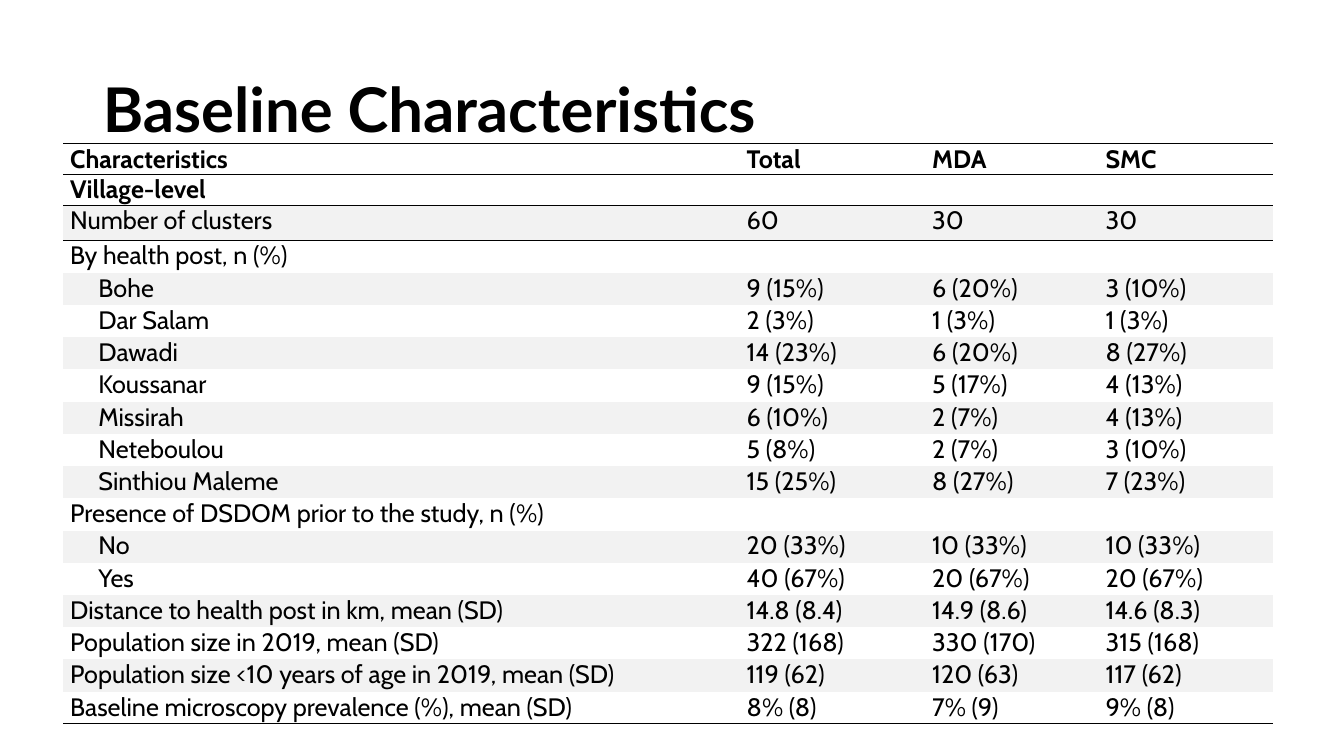
from dataclasses import dataclass
from lxml.etree import SubElement
from pptx import Presentation
from pptx.dml.color import RGBColor
from pptx.enum.text import MSO_ANCHOR, MSO_AUTO_SIZE, PP_ALIGN
from pptx.oxml import parse_xml
from pptx.oxml.ns import nsdecls, qn
from pptx.util import Inches, Pt


@dataclass(frozen=True)
class Theme:
    ink: str = "000000"
    band: str = "F2F2F2"
    title_font: str = "Lato"
    body_font: str = "Cabin"
    title_size: int = 44
    body_size: int = 18
    rule: int = 1


theme = Theme()
NO_GRID = "{2D5ABB26-0587-4C30-8999-92F81FD0307C}"


def style(p, font, size, bold):
    for r in p.runs:
        r.font.name = font
        r.font.size = Pt(size)
        r.font.bold = bold
        r.font.color.rgb = RGBColor.from_string(theme.ink)


def add_rule(cell, side):
    tcPr = cell._tc.get_or_add_tcPr()
    ln = parse_xml(f'<a:{side} {nsdecls("a")} w="{Pt(theme.rule)}"/>')
    fill = SubElement(ln, qn("a:solidFill"))
    SubElement(fill, qn("a:srgbClr"), val=theme.ink)
    tcPr.insert(0, ln)


prs = Presentation()
prs.slide_width = W = Inches(13.33)
prs.slide_height = H = Inches(7.5)
s = prs.slides.add_slide(prs.slide_layouts[5])

title = s.shapes.title
title.left, title.top = int(W * 0.069), int(H * 0.053)
title.width, title.height = int(W * 0.863), int(H * 0.193)
tf = title.text_frame
tf.text = "Baseline Characteristics"
tf.auto_size = MSO_AUTO_SIZE.NONE
tf.vertical_anchor = MSO_ANCHOR.MIDDLE
p = tf.paragraphs[0]
p.alignment = PP_ALIGN.LEFT
p.line_spacing = 0.9
style(p, theme.title_font, theme.title_size, True)

rows = [
    (0, "Characteristics", "Total", "MDA", "SMC"),
    (0, "Village-level", "", "", ""),
    (0, "Number of clusters", "60", "30", "30"),
    (0, "By health post, n (%)", "", "", ""),
    (1, "Bohe", "9 (15%)", "6 (20%)", "3 (10%)"),
    (1, "Dar Salam", "2 (3%)", "1 (3%)", "1 (3%)"),
    (1, "Dawadi", "14 (23%)", "6 (20%)", "8 (27%)"),
    (1, "Koussanar", "9 (15%)", "5 (17%)", "4 (13%)"),
    (1, "Missirah", "6 (10%)", "2 (7%)", "4 (13%)"),
    (1, "Neteboulou", "5 (8%)", "2 (7%)", "3 (10%)"),
    (1, "Sinthiou Maleme", "15 (25%)", "8 (27%)", "7 (23%)"),
    (0, "Presence of DSDOM prior to the study, n (%)", "", "", ""),
    (1, "No", "20 (33%)", "10 (33%)", "10 (33%)"),
    (1, "Yes", "40 (67%)", "20 (67%)", "20 (67%)"),
    (0, "Distance to health post in km, mean (SD)", "14.8 (8.4)", "14.9 (8.6)", "14.6 (8.3)"),
    (0, "Population size in 2019, mean (SD)", "322 (168)", "330 (170)", "315 (168)"),
    (0, "Population size <10 years of age in 2019, mean (SD)", "119 (62)", "120 (63)", "117 (62)"),
    (0, "Baseline microscopy prevalence (%), mean (SD)", "8% (8)", "7% (9)", "9% (8)"),
]
col_inches = [6.71, 1.84, 1.72, 1.73]
row_inches = [0.28, 0.26, 0.35] + [0.32] * (len(rows) - 3)
heading_rows = 2
last = len(rows) - 1
pad, indent = Inches(0.07), Inches(0.28)

frame = s.shapes.add_table(
    len(rows), len(col_inches), int(W * 0.047), int(H * 0.19),
    Inches(sum(col_inches)), Inches(sum(row_inches)))
table = frame.table
table.first_row = False
table.horz_banding = False
table._tbl.tblPr.find(qn("a:tableStyleId")).text = NO_GRID
for col, width in zip(table.columns, col_inches):
    col.width = Inches(width)

for i, (level, *texts) in enumerate(rows):
    table.rows[i].height = Inches(row_inches[i])
    for j, text in enumerate(texts):
        cell = table.cell(i, j)
        cell.margin_left = pad + (indent * level if j == 0 else 0)
        cell.margin_right = pad
        cell.margin_top = cell.margin_bottom = 0
        if text:
            cell.text_frame.text = text
            style(cell.text_frame.paragraphs[0], theme.body_font, theme.body_size, i < heading_rows)
        if i >= heading_rows and i % 2 == 0:
            cell.fill.solid()
            cell.fill.fore_color.rgb = RGBColor.from_string(theme.band)
        else:
            cell.fill.background()
        if i < heading_rows or i == last:
            add_rule(cell, "lnB")
        if i <= heading_rows:
            add_rule(cell, "lnT")

prs.save("out.pptx")
